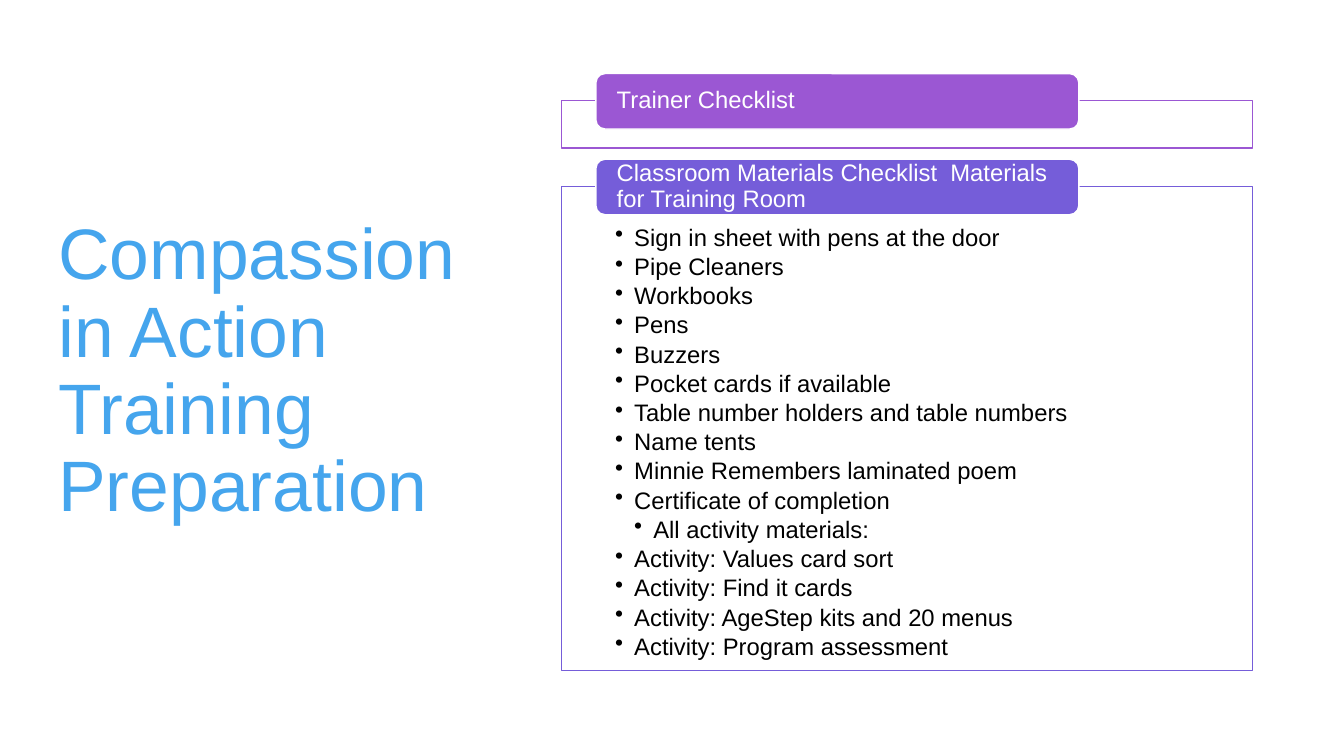
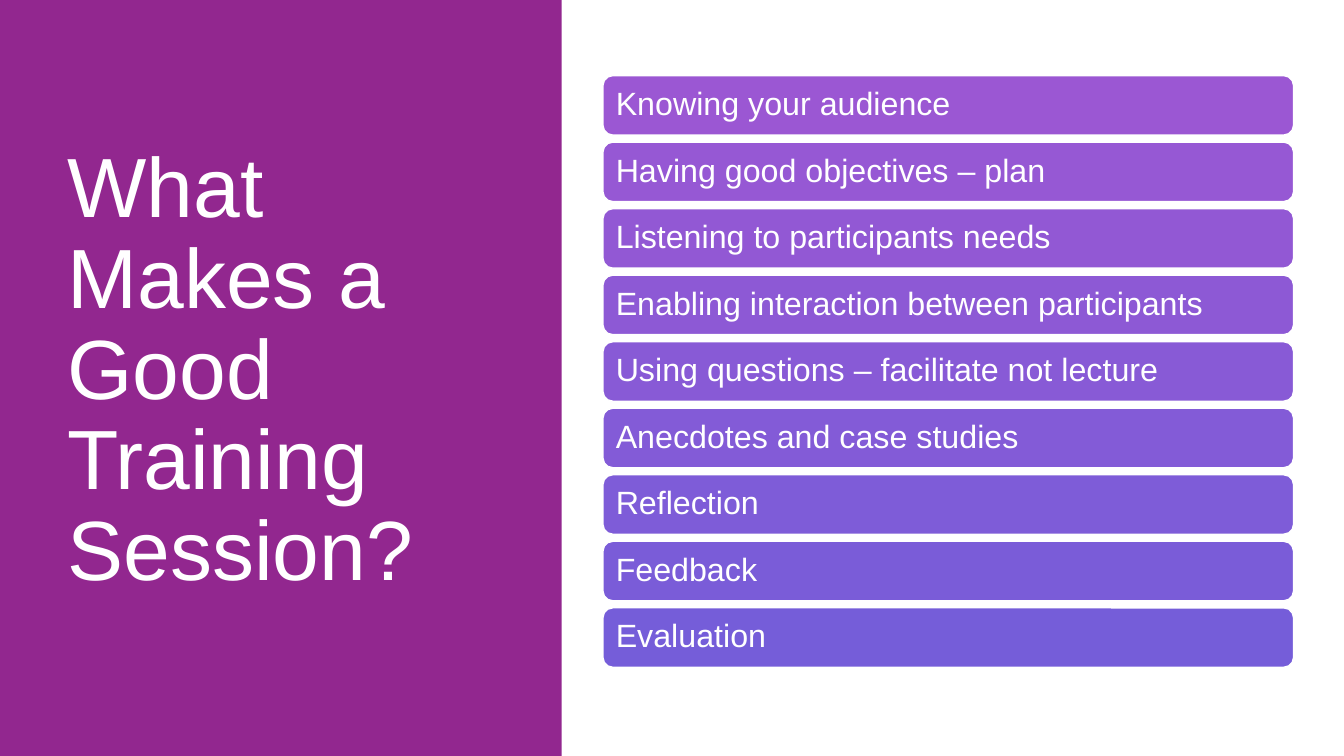
from lxml import etree
from pptx import Presentation
from pptx.dml.color import RGBColor
from pptx.enum.shapes import MSO_SHAPE as Preset
from pptx.enum.text import MSO_ANCHOR as Anchor, PP_ALIGN as Align
from pptx.oxml.ns import qn
from pptx.util import Emu, Pt

# Shared style
EMU_PER_PX = 9144  # 100 px to the inch
FONT = "Arial"
WHITE, BLACK = "FFFFFF", "000000"
SKY, PLUM = "45A5ED", "92278F"
ORCHID, VIOLET = "9B57D3", "755DD9"
TITLE_BOX = (57, 68, 416, 602)
BULLET_INDENT = 19

# Slide content
MATERIALS = [
    ("Sign in sheet with pens at the door", 1),
    ("Pipe Cleaners", 1),
    ("Workbooks", 1),
    ("Pens", 1),
    ("Buzzers", 1),
    ("Pocket cards if available", 1),
    ("Table number holders and table numbers", 1),
    ("Name tents", 1),
    ("Minnie Remembers laminated poem", 1),
    ("Certificate of completion", 1),
    ("All activity materials:", 2),
    ("Activity: Values card sort", 1),
    ("Activity: Find it cards", 1),
    ("Activity: AgeStep kits and 20 menus", 1),
    ("Activity: Program assessment", 1),
]
QUALITIES = [
    "Knowing your audience",
    "Having good objectives – plan",
    "Listening to participants needs",
    "Enabling interaction between participants",
    "Using questions – facilitate not lecture",
    "Anecdotes and case studies",
    "Reflection",
    "Feedback",
    "Evaluation",
]


def px(length):
    return Emu(length * EMU_PER_PX)


def rgb(color):
    return RGBColor.from_string(color)


def blend(start, end, share):
    """Mix two hex colours."""
    pairs = zip(bytes.fromhex(start), bytes.fromhex(end))
    return "".join(f"{round(a + (b - a) * share):02X}" for a, b in pairs)


def set_frame(shape, insets=(0, 0, 0, 0), anchor=Anchor.MIDDLE):
    frame = shape.text_frame
    frame.word_wrap = True
    frame.vertical_anchor = anchor
    (frame.margin_left, frame.margin_top,
     frame.margin_right, frame.margin_bottom) = map(px, insets)
    return frame


def write(paragraph, text, size, color=WHITE, space_after=0):
    paragraph.text = text
    paragraph.alignment = Align.LEFT
    paragraph.line_spacing = 0.9
    paragraph.space_after = Pt(space_after)
    paragraph.font.size = Pt(size)
    paragraph.font.name = FONT
    paragraph.font.color.rgb = rgb(color)


def add_bullet(paragraph, level):
    properties = paragraph._p.get_or_add_pPr()
    properties.set("marL", str(px(BULLET_INDENT * level)))
    properties.set("indent", str(px(-BULLET_INDENT)))
    etree.SubElement(properties, qn("a:buChar")).set("char", "•")


def add_title(slide, text, size, color, insets):
    box = slide.shapes.add_textbox(*map(px, TITLE_BOX))
    write(set_frame(box, insets).paragraphs[0], text, size, color)


def add_block(slide, preset, box, fill, line=None):
    shape = slide.shapes.add_shape(preset, *map(px, box))
    shape.shadow.inherit = False
    shape.fill.solid()
    shape.fill.fore_color.rgb = rgb(fill)
    if line:
        shape.line.color.rgb = rgb(line)
        shape.line.width = Pt(1)
    else:
        shape.line.fill.background()
    return shape


def add_label(slide, box, text, size, fill, inset):
    shape = add_block(slide, Preset.ROUNDED_RECTANGLE, box, fill, WHITE)
    frame = set_frame(shape, (inset, 0, inset, 0))
    write(frame.paragraphs[0], text, size)


def add_panel(slide, top, height, heading, color, items=()):
    """Outlined panel with a heading tab over its top edge."""
    panel = add_block(slide, Preset.RECTANGLE, (557, top, 685, height), WHITE, color)
    frame = set_frame(panel, (53, 39, 53, 13), Anchor.TOP)
    for index, (text, level) in enumerate(items):
        paragraph = frame.add_paragraph() if index else frame.paragraphs[0]
        add_bullet(paragraph, level)
        write(paragraph, text, 17, BLACK, space_after=2.5)
    add_label(slide, (591, top - 27, 479, 55), heading, 17, color, 18)


def build_checklist(slide):
    add_title(slide, "Compassion in Action\vTraining Preparation", 51, SKY, (1, 1, 0, 0))
    add_panel(slide, 100, 47, "Trainer Checklist", ORCHID)
    add_panel(slide, 185, 480,
              "Classroom Materials Checklist  Materials for Training Room",
              VIOLET, MATERIALS)


def build_qualities(slide):
    add_block(slide, Preset.RECTANGLE, (0, 0, 557, 750), PLUM)
    add_title(slide, "What Makes a Good Training Session?", 60, WHITE, (10, 5, 10, 5))
    # Bars shade evenly from orchid to violet
    for index, text in enumerate(QUALITIES):
        fill = blend(ORCHID, VIOLET, index / (len(QUALITIES) - 1))
        add_label(slide, (598, 75 + 66 * index, 685, 59), text, 23, fill, 10)


def main():
    presentation = Presentation()
    presentation.slide_width, presentation.slide_height = px(1333), px(750)
    blank = presentation.slide_layouts[6]
    for build in (build_checklist, build_qualities):
        build(presentation.slides.add_slide(blank))
    presentation.save("out.pptx")


if __name__ == "__main__":
    main()
